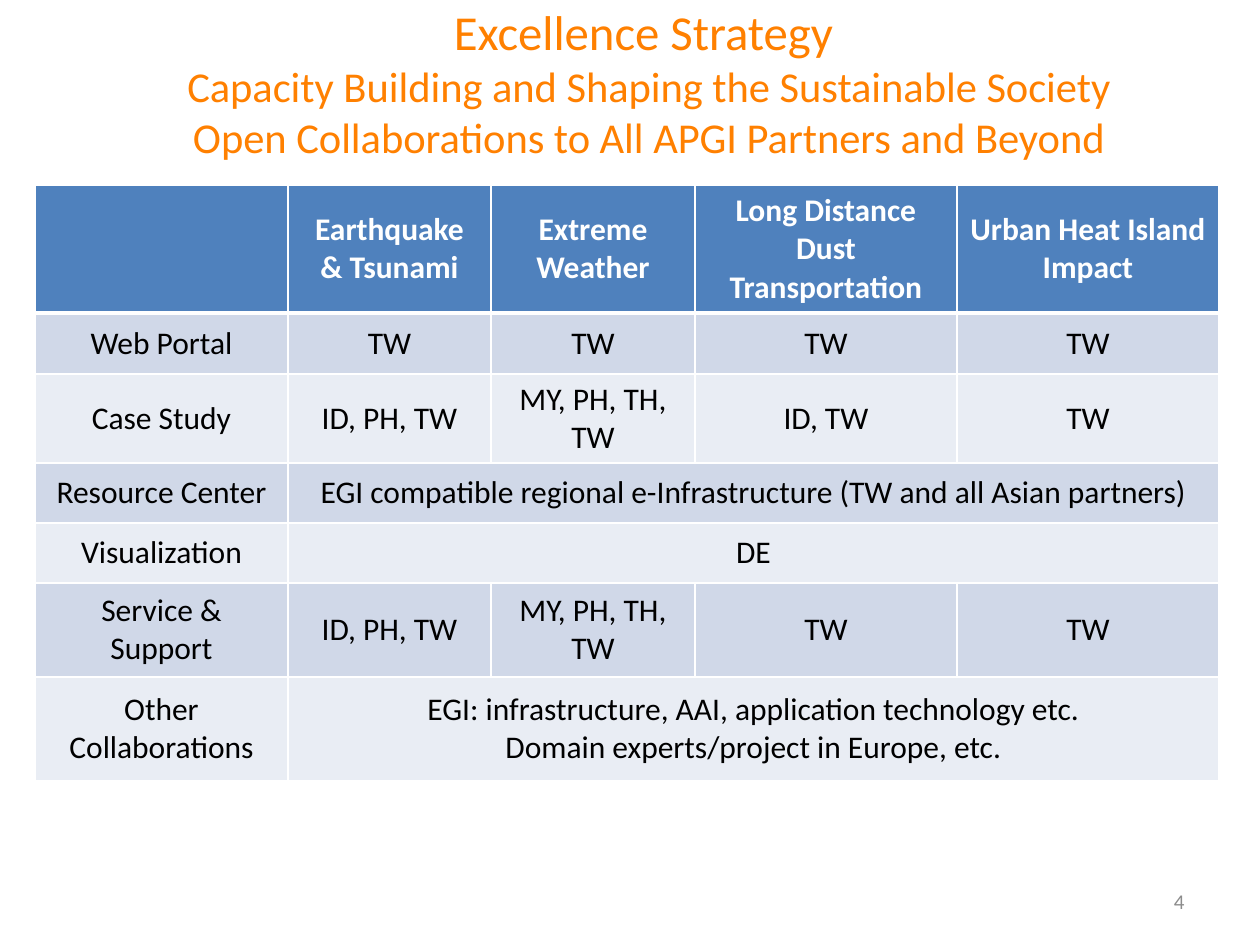
from dataclasses import dataclass

from lxml.etree import SubElement
from pptx import Presentation
from pptx.dml.color import RGBColor
from pptx.enum.text import MSO_ANCHOR as Anchor, PP_ALIGN as Align
from pptx.oxml.ns import qn
from pptx.util import Emu, Pt

PX_PER_INCH = 126
FONT = "Calibri"
ORANGE = RGBColor(0xFF, 0x80, 0x00)
WHITE = RGBColor(0xFF, 0xFF, 0xFF)
BLACK = RGBColor(0x00, 0x00, 0x00)
GRAY = RGBColor(0x8C, 0x8C, 0x8C)
HEADER_BLUE = RGBColor(0x4F, 0x81, 0xBD)
BANDS = (RGBColor(0xD0, 0xD8, 0xE8), RGBColor(0xE9, 0xED, 0xF4))


def px(length: int) -> Emu:
    return Emu(round(length * 914400 / PX_PER_INCH))


@dataclass(frozen=True)
class Line:
    text: str
    size: float


@dataclass(frozen=True)
class TextBlock:
    left: int
    top: int
    width: int
    height: int
    lines: tuple[Line, ...]
    color: RGBColor
    align: Align


@dataclass(frozen=True)
class Row:
    """A table row; a single entry after the label spans all topic columns."""
    height: int
    label: str
    entries: tuple[str, ...]


TITLE = TextBlock(
    63, 3, 1172, 157,
    (Line("Excellence Strategy ", 27.9),
     Line("Capacity Building and Shaping the Sustainable Society", 24.3),
     Line("Open Collaborations to All APGI Partners and Beyond", 24.3)),
    ORANGE, Align.CENTER)
PAGE_NUMBER = TextBlock(903, 876, 294, 50, (Line("4", 12),), GRAY, Align.RIGHT)

TABLE_LEFT, TABLE_TOP = 35, 185
COLUMN_WIDTHS = (253, 203, 204, 262, 262)
ROWS = (
    Row(128, "", ("Earthquake & Tsunami", "Extreme Weather",
                  "Long Distance Dust Transportation", "Urban Heat Island Impact")),
    Row(61, "Web Portal", ("TW", "TW", "TW", "TW")),
    Row(89, "Case Study", ("ID, PH, TW", "MY, PH, TH, TW", "ID, TW", "TW")),
    Row(60, "Resource Center",
        ("EGI compatible regional e-Infrastructure (TW and all Asian partners)",)),
    Row(60, "Visualization", ("DE",)),
    Row(94, "Service & Support", ("ID, PH, TW", "MY, PH, TH, TW", "TW", "TW")),
    Row(104, "Other Collaborations",
        ("EGI: infrastructure, AAI, application technology etc.\n"
         "Domain experts/project in Europe, etc.",)),
)


def add_text(slide, block: TextBlock) -> None:
    box = slide.shapes.add_textbox(
        px(block.left), px(block.top), px(block.width), px(block.height))
    frame = box.text_frame
    frame.word_wrap = True
    frame.vertical_anchor = Anchor.MIDDLE
    paragraph = frame.paragraphs[0]
    paragraph.alignment = block.align
    paragraph.font.name = FONT
    paragraph.font.color.rgb = block.color
    for index, line in enumerate(block.lines):
        if index:
            paragraph.add_line_break()
        run = paragraph.add_run()
        run.text = line.text
        run.font.size = Pt(line.size)


def set_borders(cell, bottom_width: int) -> None:
    """Draw white borders; they must precede the fill in the cell properties."""
    properties = cell._tc.get_or_add_tcPr()
    for side in ("L", "R", "T", "B"):
        width = bottom_width if side == "B" else 1
        border = SubElement(properties, qn(f"a:ln{side}"), w=str(Pt(width)))
        fill = SubElement(border, qn("a:solidFill"))
        SubElement(fill, qn("a:srgbClr"), val=str(WHITE))


def style_cell(cell, text: str, fill: RGBColor, is_header: bool) -> None:
    set_borders(cell, 3 if is_header else 1)
    cell.fill.solid()
    cell.fill.fore_color.rgb = fill
    cell.vertical_anchor = Anchor.MIDDLE
    cell.text = text
    for paragraph in cell.text_frame.paragraphs:
        paragraph.alignment = Align.CENTER
        paragraph.font.name = FONT
        paragraph.font.size = Pt(18)
        paragraph.font.bold = is_header
        paragraph.font.color.rgb = WHITE if is_header else BLACK


def add_strategy_table(slide) -> None:
    table = slide.shapes.add_table(
        len(ROWS), len(COLUMN_WIDTHS), px(TABLE_LEFT), px(TABLE_TOP),
        px(sum(COLUMN_WIDTHS)), px(sum(row.height for row in ROWS))).table
    for column, width in zip(table.columns, COLUMN_WIDTHS):
        column.width = px(width)
    for r, row in enumerate(ROWS):
        table.rows[r].height = px(row.height)
        fill = BANDS[(r - 1) % 2] if r else HEADER_BLUE
        texts = (row.label, *row.entries)
        for c in range(len(COLUMN_WIDTHS)):
            text = texts[c] if c < len(texts) else ""
            style_cell(table.cell(r, c), text, fill, r == 0)
        if len(row.entries) == 1:
            table.cell(r, 1).merge(table.cell(r, len(COLUMN_WIDTHS) - 1))


def main() -> None:
    presentation = Presentation()
    presentation.slide_width, presentation.slide_height = px(1260), px(945)
    slide = presentation.slides.add_slide(presentation.slide_layouts[6])
    add_text(slide, TITLE)
    add_strategy_table(slide)
    add_text(slide, PAGE_NUMBER)
    presentation.save("out.pptx")


if __name__ == "__main__":
    main()
